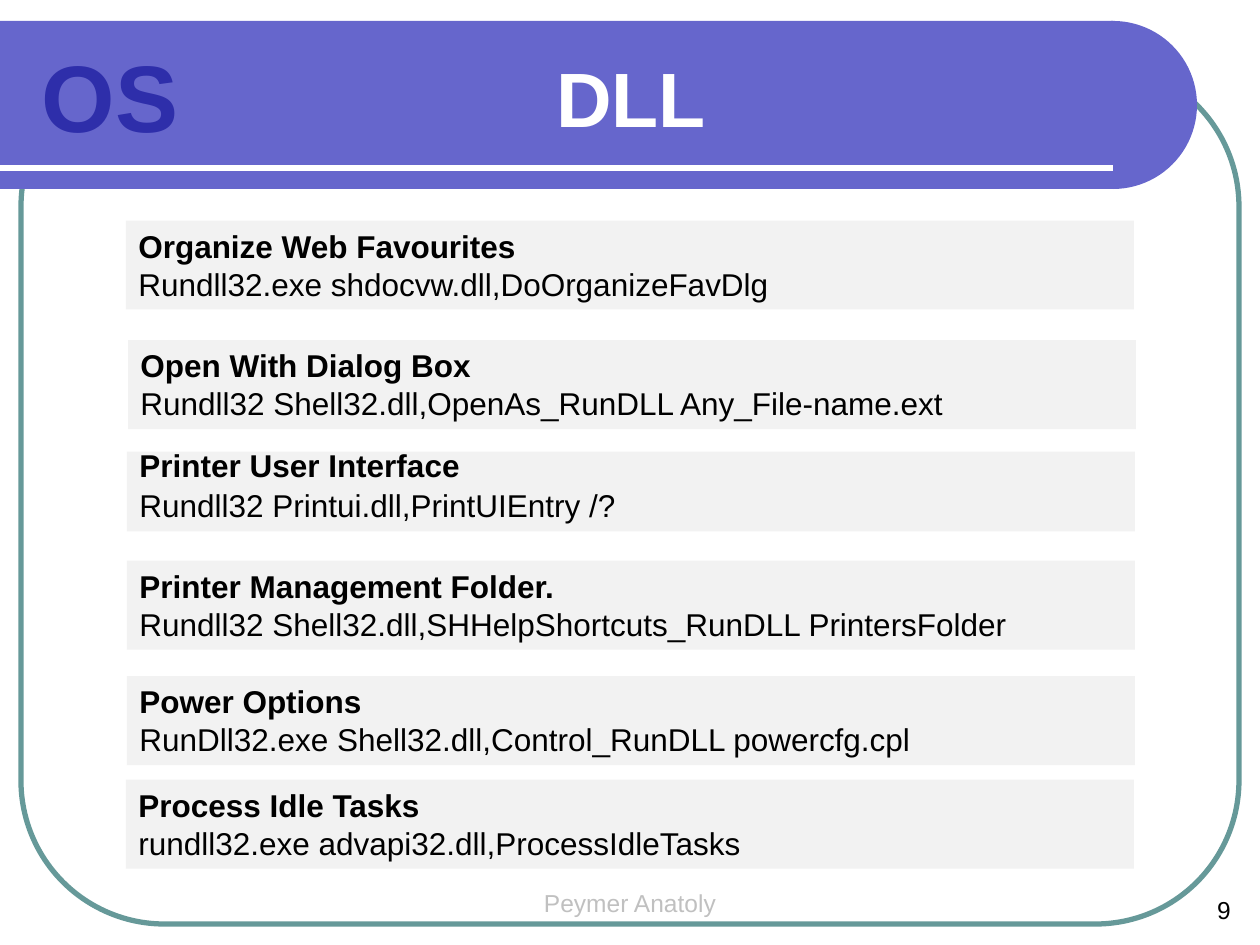
from pptx import Presentation, util as u
from pptx.dml.color import RGBColor
from pptx.enum import shapes, text
from lxml import etree

CELL = u.Inches(1) / 6  # the slide is a grid of 60 columns by 45 rows
A_NS = "http://schemas.openxmlformats.org/drawingml/2006/main"
MIDDLE, TOP = text.MSO_ANCHOR.MIDDLE, text.MSO_ANCHOR.TOP
LEFT, CENTER = text.PP_ALIGN.LEFT, text.PP_ALIGN.CENTER
RIGHT, JUSTIFY = text.PP_ALIGN.RIGHT, text.PP_ALIGN.JUSTIFY
PRESET = shapes.MSO_SHAPE


def color(hex_string):
    return RGBColor.from_string(hex_string)


def cells(*lengths):
    """Turn grid columns and rows into slide lengths."""
    return [u.Emu(round(length * CELL)) for length in lengths]


class SlideBuilder:
    font = "Arial"
    band = "6666CC"
    frame = "669999"
    panel = "F2F2F2"
    line_width = u.Pt(3)

    def __init__(self, slide):
        self.slide = slide

    def set_text(self, shape, lines, size, fill="000000", bold=(False,),
                 align=LEFT, anchor=TOP, wrap=True):
        """Fill a shape with one paragraph per line."""
        frame = shape.text_frame
        frame.text = "\n".join(lines)
        frame.word_wrap = wrap
        frame.auto_size = text.MSO_AUTO_SIZE.NONE
        frame.vertical_anchor = anchor
        for paragraph, is_bold in zip(frame.paragraphs, bold):
            paragraph.alignment = align
            paragraph.font.name = self.font
            paragraph.font.size = u.Pt(size)
            paragraph.font.bold = is_bold
            paragraph.font.color.rgb = color(fill)

    def shape(self, preset, box, fill=None, line=None):
        shape = self.slide.shapes.add_shape(preset, *cells(*box))
        shape.shadow.inherit = False
        if fill:
            shape.fill.solid()
            shape.fill.fore_color.rgb = color(fill)
        else:
            shape.fill.background()
        if line:
            shape.line.color.rgb = color(line)
            shape.line.width = self.line_width
        else:
            shape.line.fill.background()
        return shape

    def rule(self, start, end, line):
        rule = self.slide.shapes.add_connector(
            shapes.MSO_CONNECTOR.STRAIGHT, *cells(*start, *end))
        rule.line.color.rgb = color(line)
        rule.line.width = self.line_width
        etree.SubElement(rule.element.spPr, f"{{{A_NS}}}effectLst")

    def label(self, box, words, size, **style):
        label = self.slide.shapes.add_textbox(*cells(*box))
        self.set_text(label, [words], size, **style)

    def title(self, box, words):
        title = self.slide.shapes.title
        title.left, title.top, title.width, title.height = cells(*box)
        self.set_text(title, [words], 44, fill="FFFFFF", bold=(True,),
                      align=CENTER, anchor=MIDDLE, wrap=False)
        self.slide.shapes.element.append(title.element)  # in front of the band

    def command(self, left, top, name, command_line, tight=False):
        """Add a panel with a bold name above its command line."""
        panel = self.shape(PRESET.RECTANGLE,
                           (left, top, 48, 3.8 if tight else 4.24), self.panel)
        self.set_text(panel, [name, command_line], 18, bold=(True, False),
                      align=JUSTIFY if tight else LEFT)
        if tight:
            for paragraph in panel.text_frame.paragraphs:
                paragraph.line_spacing = u.Pt(15)
                paragraph.space_after = u.Pt(7.5)


COMMANDS = [
    (6, 10.5, "Organize Web Favourites",
     "Rundll32.exe shdocvw.dll,DoOrganizeFavDlg"),
    (6.1, 16.2, "Open With Dialog Box",
     "Rundll32 Shell32.dll,OpenAs_RunDLL Any_File-name.ext"),
    (6.05, 21.5, "Printer User Interface",
     "Rundll32 Printui.dll,PrintUIEntry /?", True),
    (6.05, 26.7, "Printer Management Folder.",
     "Rundll32 Shell32.dll,SHHelpShortcuts_RunDLL PrintersFolder"),
    (6.05, 32.2, "Power Options",
     "RunDll32.exe Shell32.dll,Control_RunDLL powercfg.cpl"),
    (6, 37.13, "Process Idle Tasks",
     "rundll32.exe advapi32.dll,ProcessIdleTasks"),
]


def main():
    presentation = Presentation()
    presentation.slide_width, presentation.slide_height = cells(60, 45)
    title_only = presentation.slide_layouts[5]
    builder = SlideBuilder(presentation.slides.add_slide(title_only))

    builder.label((24.5, 42, 11, 2.1), "Peymer Anatoly", 14,
                  fill="C0C0C0", align=CENTER)
    builder.label((55.2, 42.3, 4, 2), "9", 14, align=RIGHT)

    frame = builder.shape(PRESET.ROUNDED_RECTANGLE, (1, 3, 58, 41),
                          line=builder.frame)
    frame.adjustments[0] = 1 / 6
    builder.shape(PRESET.RECTANGLE, (0, 1, 53, 8), builder.band)
    builder.shape(PRESET.OVAL, (49, 1, 8, 8), builder.band)
    builder.rule((0, 8), (53, 8), "FFFFFF")

    builder.title((19.55, 1, 21, 7.2), "DLL")
    builder.label((1, 1.5, 8.5, 6.05), "OS", 54, fill="2E2EAA",
                  bold=(True,), align=CENTER)
    for command in COMMANDS:
        builder.command(*command)

    presentation.save("out.pptx")


if __name__ == "__main__":
    main()
